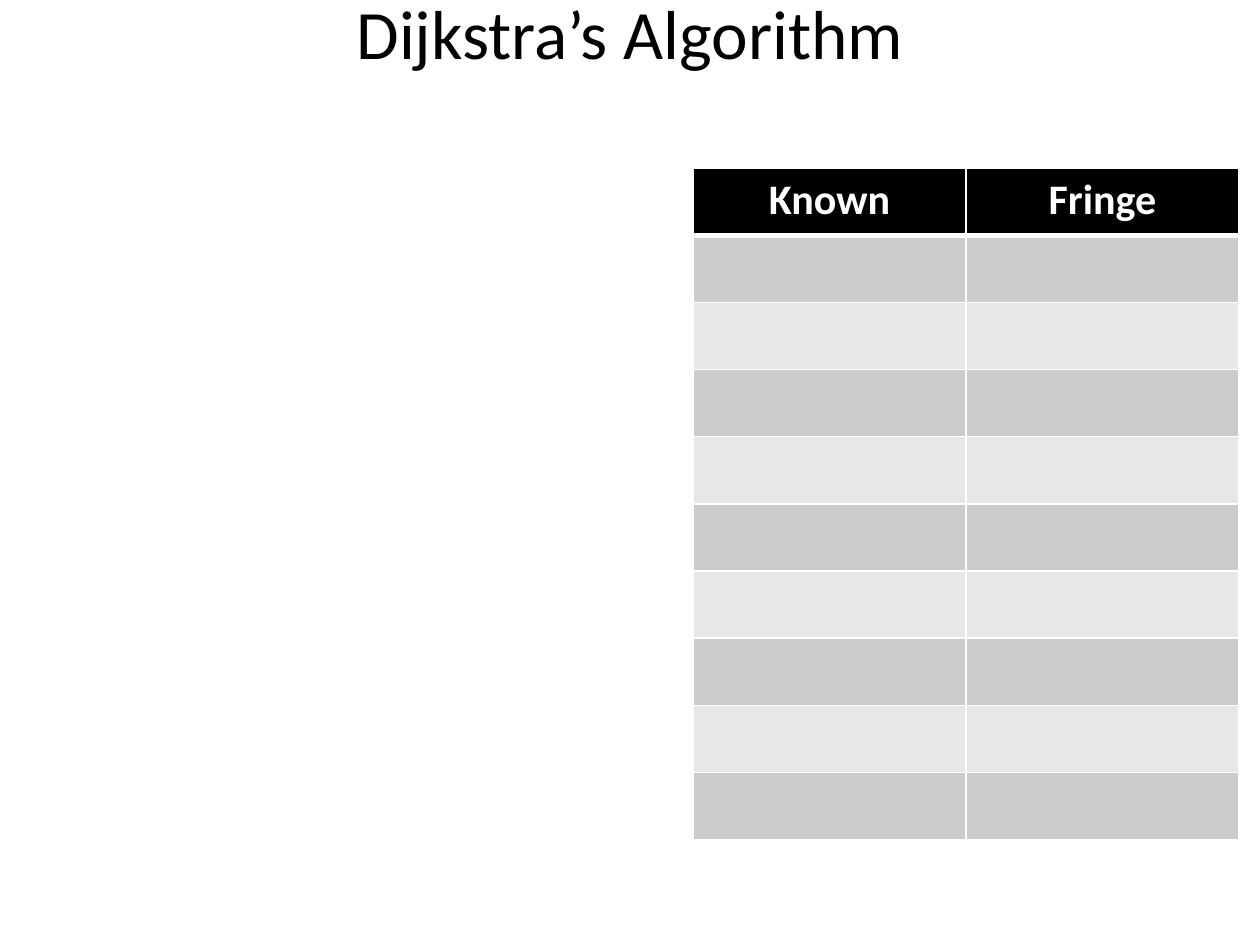
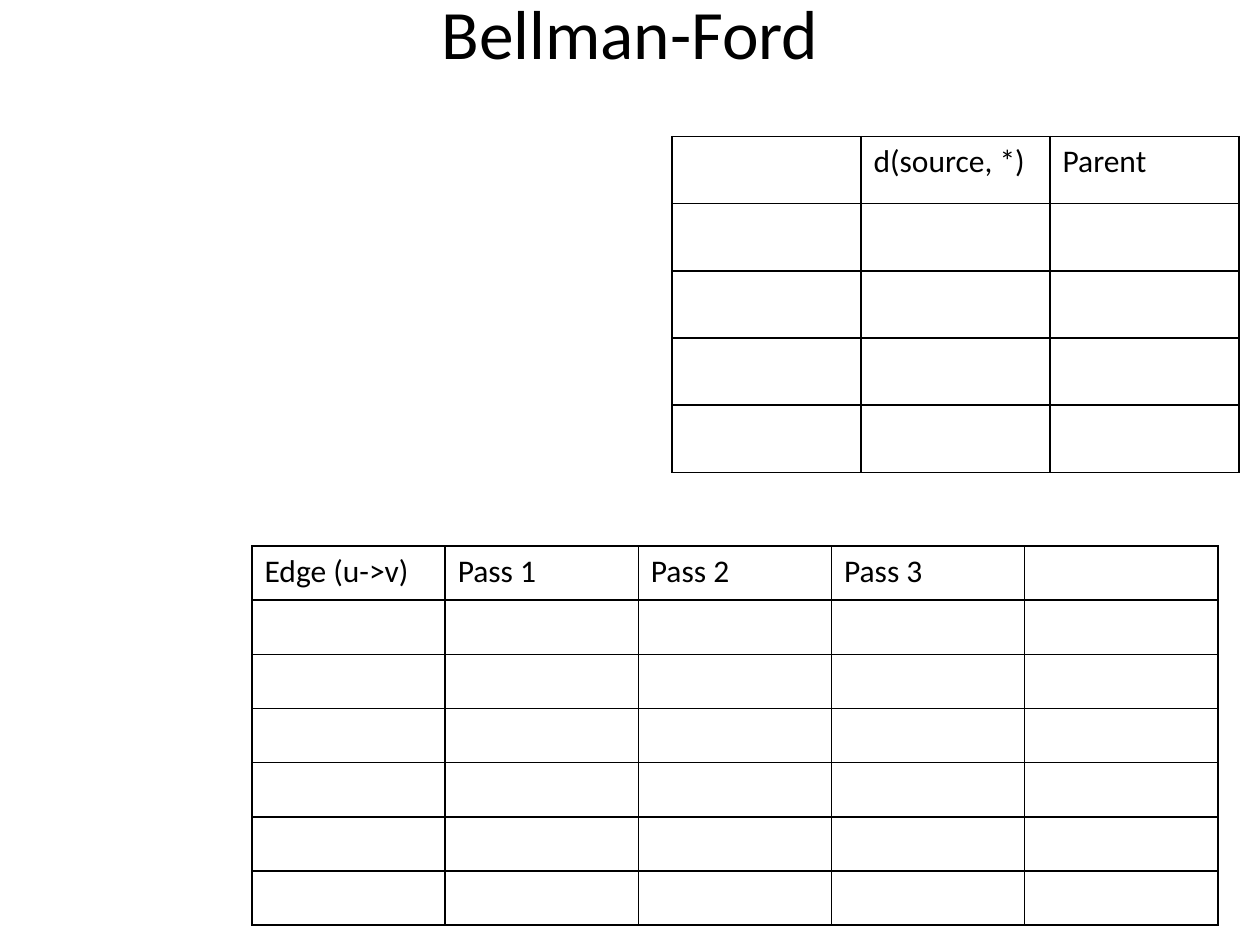
"""Build two worksheet slides on shortest paths: Dijkstra's algorithm and Bellman-Ford."""
from lxml.etree import SubElement
from pptx import Presentation
from pptx.dml.color import RGBColor
from pptx.enum.text import MSO_ANCHOR as Anchor, MSO_AUTO_SIZE as AutoSize, PP_ALIGN as Align
from pptx.oxml.ns import qn
from pptx.util import Pt

FONT = "Calibri"
BLACK, WHITE = "000000", "FFFFFF"
DARK_BAND, LIGHT_BAND = "CCCCCC", "E7E7E7"
color = RGBColor.from_string


def write_text(frame, text, size=18, ink=BLACK, bold=False, align=Align.LEFT):
    para = frame.paragraphs[0]
    para.alignment = align
    span = para.add_run()
    span.text = text
    span.font.name = FONT
    span.font.size = Pt(size)
    span.font.bold = bold
    span.font.color.rgb = color(ink)


def add_grid(page, left, top, column_width, row_height, row_count, headers,
             line=BLACK, header_rule=1, fills=None, **header_format):
    column_count = len(headers)
    table = page.shapes.add_table(
        row_count, column_count, Pt(left), Pt(top),
        Pt(column_width * column_count), Pt(row_height * row_count)).table
    table.horz_banding = False
    for column in table.columns:
        column.width = Pt(column_width)
    for row_index, row in enumerate(table.rows):
        row.height = Pt(row_height)
        widths = {"lnL": 1, "lnR": 1,
                  "lnT": header_rule if row_index == 1 else 1,
                  "lnB": header_rule if row_index == 0 else 1}
        for cell, header in zip(row.cells, headers):
            properties = cell._tc.get_or_add_tcPr()
            for side, width in widths.items():
                border = SubElement(properties, qn(f"a:{side}"), w=str(Pt(width)))
                paint = SubElement(border, qn("a:solidFill"))
                SubElement(paint, qn("a:srgbClr"), val=line)
            if fills:
                cell.fill.solid()
                cell.fill.fore_color.rgb = color(fills[row_index])
            else:
                cell.fill.background()
            if row_index == 0 and header:
                write_text(cell.text_frame, header, **header_format)


deck = Presentation()
deck.slide_width, deck.slide_height = Pt(720), Pt(540)

pages = []
for heading in ("Dijkstra’s Algorithm", "Bellman-Ford"):
    page = deck.slides.add_slide(deck.slide_layouts[5])
    title = page.shapes.title
    title.left, title.top, title.width, title.height = Pt(36), Pt(-6), Pt(648), Pt(48)
    frame = title.text_frame
    frame.auto_size = AutoSize.NONE
    frame.vertical_anchor = Anchor.MIDDLE
    frame.margin_top = frame.margin_bottom = 0
    write_text(frame, heading, size=39.6, align=Align.CENTER)
    pages.append(page)
dijkstra, bellman_ford = pages

bands = [DARK_BAND if index % 2 == 0 else LIGHT_BAND for index in range(9)]
add_grid(dijkstra, 396, 96, 156, 38.4, 10, ["Known", "Fringe"],
         line=WHITE, header_rule=3, fills=[BLACK] + bands,
         size=24, ink=WHITE, bold=True, align=Align.CENTER)

add_grid(bellman_ford, 384, 78, 108, 38.4, 5, ["", "d(source, *)", "Parent"])
add_grid(bellman_ford, 144, 312, 110.4, 30.96, 7,
         ["Edge (u->v)", "Pass 1", "Pass 2", "Pass 3", ""])

deck.save("out.pptx")
